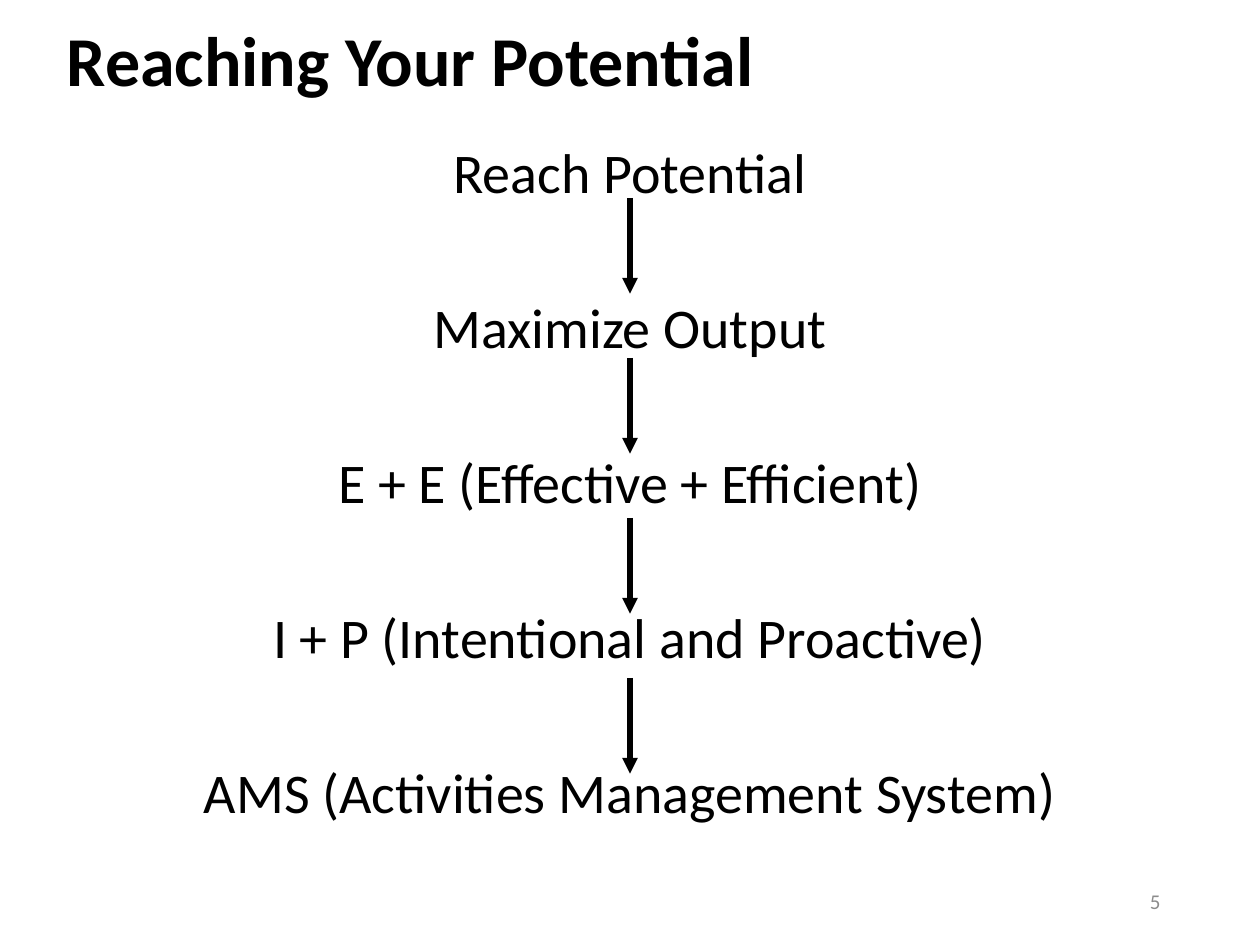
"""Build the "Reaching Your Potential" slide: five steps joined by arrows."""
from dataclasses import dataclass

import lxml.etree
import pptx
import pptx.dml.color
import pptx.enum.shapes
import pptx.enum.text
import pptx.oxml.ns
import pptx.shapes.base
import pptx.slide
import pptx.util

SLIDE_WIDTH = pptx.util.Inches(10)
SLIDE_HEIGHT = pptx.util.Inches(7.5)
COLUMNS = 100
ROWS = 75
FONT = "Calibri"
BLACK = pptx.dml.color.RGBColor(0x00, 0x00, 0x00)
GRAY = pptx.dml.color.RGBColor(0x8C, 0x8C, 0x8C)
LEFT = pptx.enum.text.PP_ALIGN.LEFT
CENTER = pptx.enum.text.PP_ALIGN.CENTER
RIGHT = pptx.enum.text.PP_ALIGN.RIGHT
TOP = pptx.enum.text.MSO_ANCHOR.TOP
MIDDLE = pptx.enum.text.MSO_ANCHOR.MIDDLE

STEPS = (
    "Reach Potential",
    "Maximize Output",
    "E + E (Effective + Efficient)",
    "I + P (Intentional and Proactive)",
    "AMS (Activities Management System)",
)
STEP_GAP = pptx.util.Pt(54)
ARROW_COLUMN = 50
FIRST_ARROW_ROW = 15.7
ARROW_PITCH = 12.7
ARROW_ROWS = 7.6


@dataclass(frozen=True)
class Area:
    """A rectangle in grid columns and rows."""

    column: float
    row: float
    columns: float
    rows: float


@dataclass(frozen=True)
class TextStyle:
    """The look shared by all paragraphs of one text."""

    size: float
    color: pptx.dml.color.RGBColor = BLACK
    alignment: pptx.enum.text.PP_ALIGN = LEFT
    anchor: pptx.enum.text.MSO_ANCHOR = TOP
    bold: bool = False
    line_spacing: float = 1.0


TITLE_AREA = Area(4.3, 0.8, 74, 7.7)
STEPS_AREA = Area(6.9, 11, 86.2, 56.2)
NUMBER_AREA = Area(70.6, 69.5, 22.5, 4)
TITLE_STYLE = TextStyle(40, bold=True)
STEPS_STYLE = TextStyle(32, alignment=CENTER, line_spacing=0.9)
NUMBER_STYLE = TextStyle(12, GRAY, RIGHT, MIDDLE)


def across(columns: float) -> int:
    """Turn grid columns into a length."""
    return round(SLIDE_WIDTH * columns / COLUMNS)


def down(rows: float) -> int:
    """Turn grid rows into a length."""
    return round(SLIDE_HEIGHT * rows / ROWS)


def place_text(
    shape: pptx.shapes.base.BaseShape, area: Area, lines: tuple[str, ...], style: TextStyle
) -> None:
    """Move a shape to its area and fill it with formatted paragraphs."""
    shape.left, shape.top = across(area.column), down(area.row)
    shape.width, shape.height = across(area.columns), down(area.rows)
    frame = shape.text_frame
    frame.text = "\n".join(lines)
    frame.word_wrap = True
    frame.auto_size = pptx.enum.text.MSO_AUTO_SIZE.NONE
    frame.vertical_anchor = style.anchor
    for index, paragraph in enumerate(frame.paragraphs):
        paragraph.alignment = style.alignment
        paragraph.line_spacing = style.line_spacing
        if index:
            paragraph.space_before = STEP_GAP
        paragraph.font.name = FONT
        paragraph.font.size = pptx.util.Pt(style.size)
        paragraph.font.bold = style.bold
        paragraph.font.color.rgb = style.color


def add_text(
    slide: pptx.slide.Slide, area: Area, lines: tuple[str, ...], style: TextStyle
) -> None:
    """Add a text box in an area."""
    place_text(slide.shapes.add_textbox(0, 0, 0, 0), area, lines, style)


def add_down_arrow(slide: pptx.slide.Slide, row: float) -> None:
    """Add a vertical arrow that starts at a grid row."""
    arrow = slide.shapes.add_connector(
        pptx.enum.shapes.MSO_CONNECTOR.STRAIGHT,
        across(ARROW_COLUMN),
        down(row),
        across(ARROW_COLUMN),
        down(row + ARROW_ROWS),
    )
    arrow.line.color.rgb = BLACK
    arrow.line.width = pptx.util.Pt(3)
    line = arrow.line._get_or_add_ln()
    lxml.etree.SubElement(line, pptx.oxml.ns.qn("a:tailEnd"), type="triangle")
    lxml.etree.SubElement(arrow._element.spPr, pptx.oxml.ns.qn("a:effectLst"))


def main() -> None:
    """Build and save the presentation."""
    presentation = pptx.Presentation()
    presentation.slide_width = SLIDE_WIDTH
    presentation.slide_height = SLIDE_HEIGHT
    slide = presentation.slides.add_slide(presentation.slide_layouts.get_by_name("Title Only"))
    place_text(slide.shapes.title, TITLE_AREA, ("Reaching Your Potential",), TITLE_STYLE)
    add_text(slide, STEPS_AREA, STEPS, STEPS_STYLE)
    add_text(slide, NUMBER_AREA, ("5",), NUMBER_STYLE)
    for index in range(len(STEPS) - 1):
        add_down_arrow(slide, FIRST_ARROW_ROW + index * ARROW_PITCH)
    presentation.save("out.pptx")


if __name__ == "__main__":
    main()
